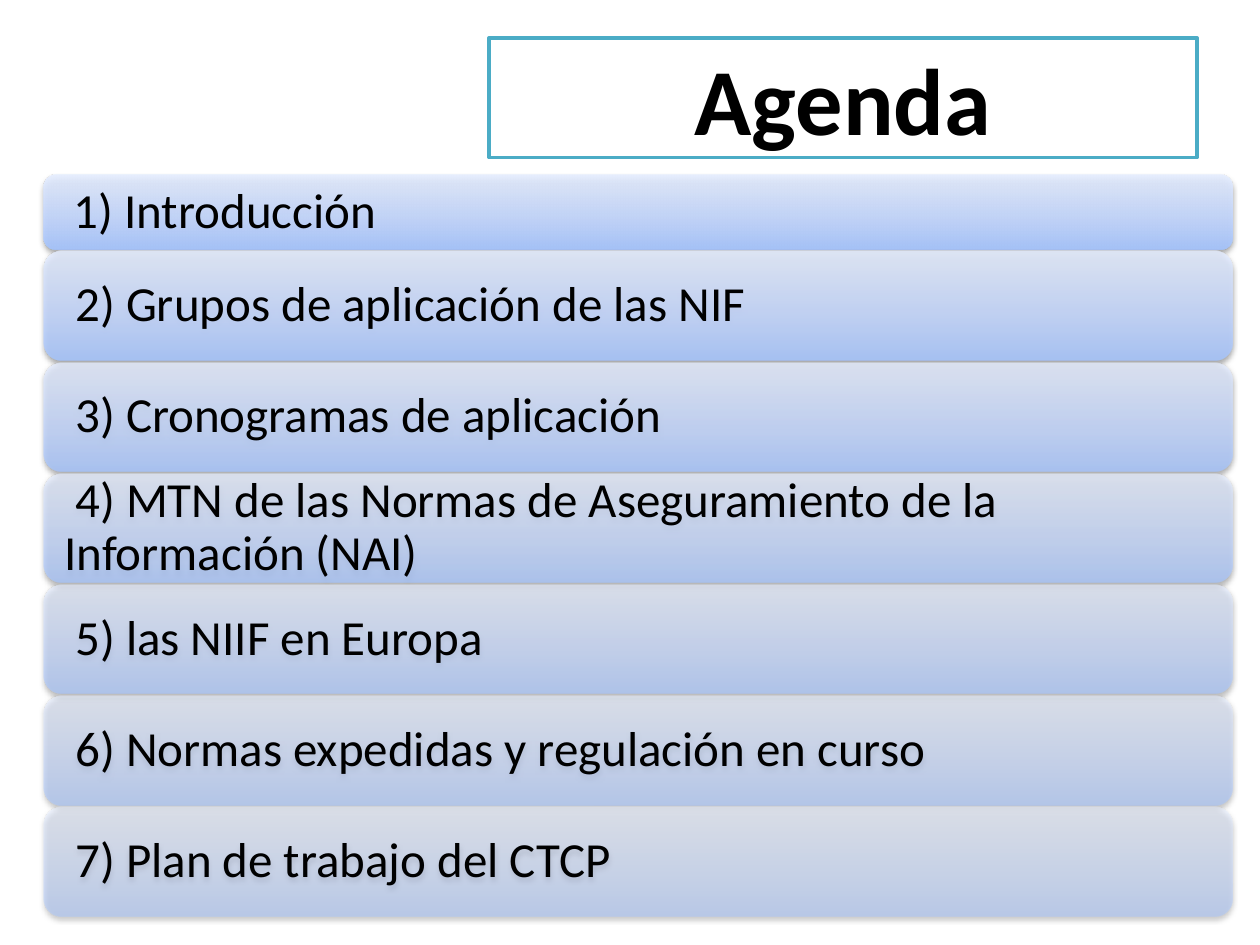
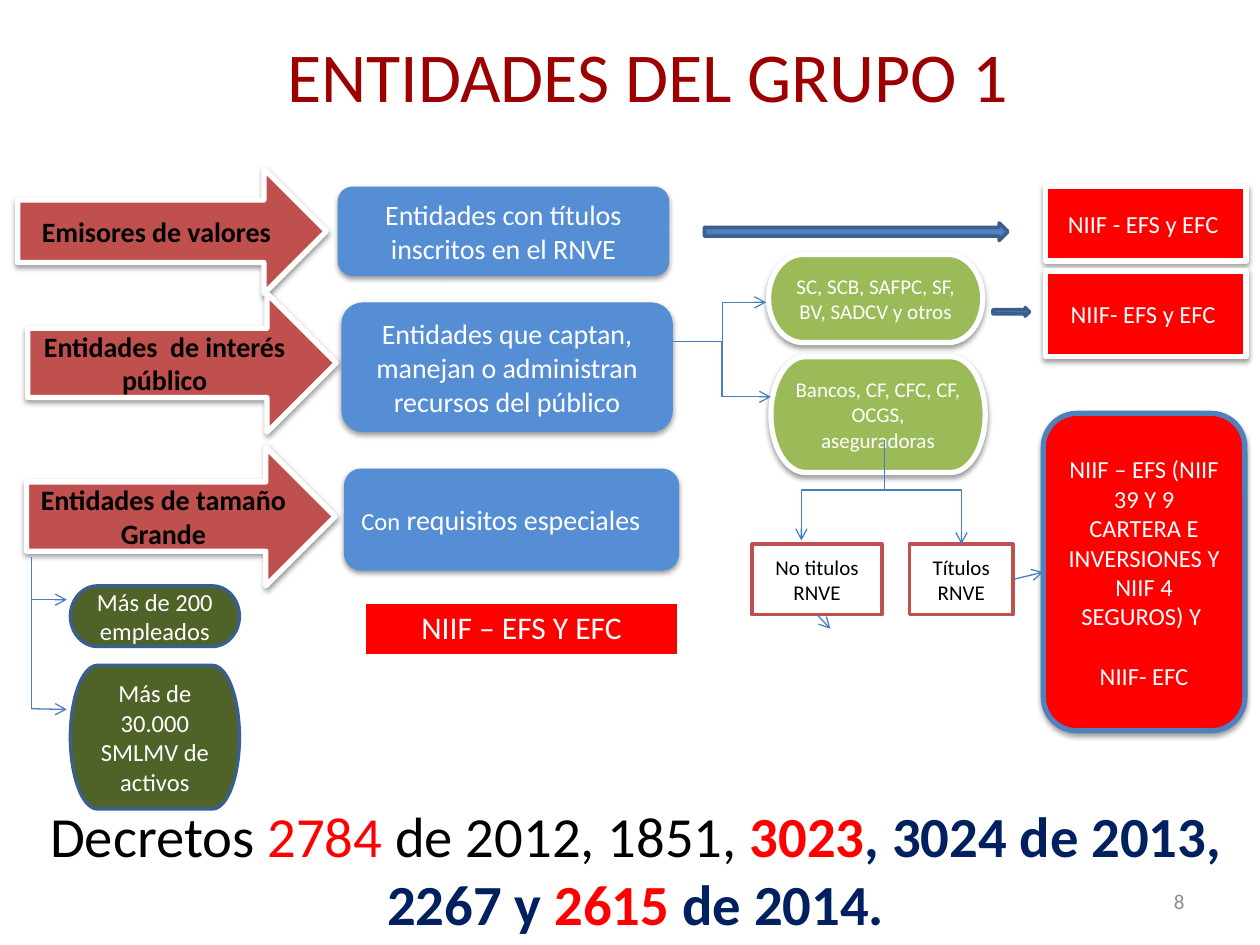
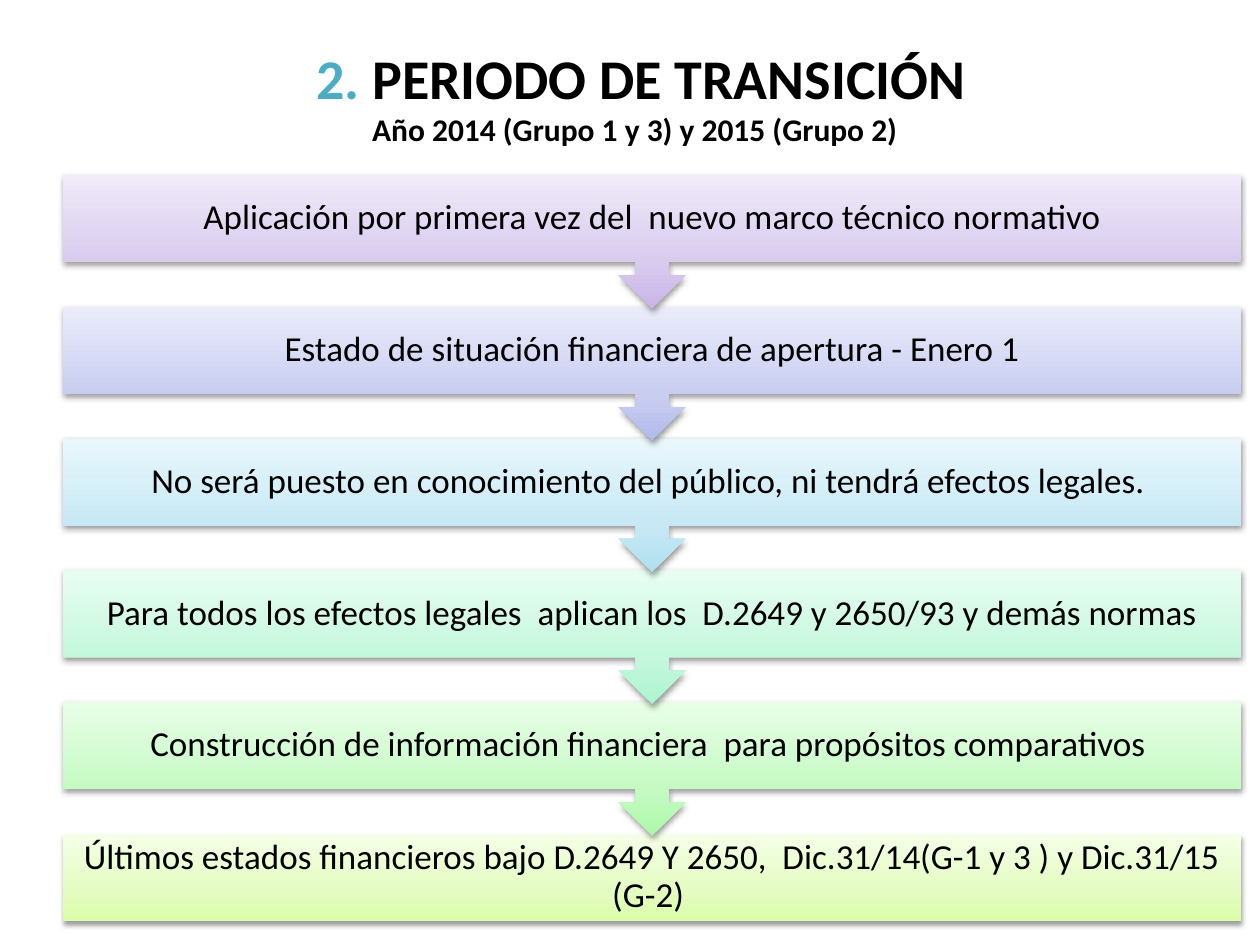
from lxml import etree
from pptx import Presentation
from pptx import util as u
from pptx.dml.color import RGBColor
from pptx.enum import shapes, text
from pptx.oxml.ns import qn

Pt = u.Pt
KIND, LINK = shapes.MSO_SHAPE, shapes.MSO_CONNECTOR
LEFT, MID, RIGHT = text.PP_ALIGN.LEFT, text.PP_ALIGN.CENTER, text.PP_ALIGN.RIGHT
FONT = "Calibri"

# Colours
BLACK = RGBColor(0x00, 0x00, 0x00)
WHITE = RGBColor(0xFF, 0xFF, 0xFF)
RED = RGBColor(0xFF, 0x00, 0x00)
NAVY = RGBColor(0x00, 0x20, 0x60)
WINE = RGBColor(0x9C, 0x00, 0x01)
TEAL = RGBColor(0x4B, 0xAC, 0xC6)
BRICK = RGBColor(0xC0, 0x50, 0x4D)
SKY = RGBColor(0x55, 0x8E, 0xD5)
BLUE = RGBColor(0x4F, 0x81, 0xBD)
STEEL = RGBColor(0x3A, 0x5F, 0x8C)
WIRE = RGBColor(0x4B, 0x7E, 0xBC)
LIME = RGBColor(0x9B, 0xBB, 0x59)
OLIVE = RGBColor(0x4F, 0x62, 0x28)
GREY = RGBColor(0x8C, 0x8C, 0x8C)

# Slide 1: agenda
AGENDA = [
    " 1) Introducción",
    " 2) Grupos de aplicación de las NIF",
    " 3) Cronogramas de aplicación",
    " 4) MTN de las Normas de Aseguramiento de la Información (NAI)",
    " 5) las NIIF en Europa",
    " 6) Normas expedidas y regulación en curso",
    " 7) Plan de trabajo del CTCP",
]
ICE = ("A4C4FF", "BFD4FF", "E6EEFF")

# Slide 2: box looks, then boxes as (name, look, place, paragraphs)
LOOKS = {
    "arrow": dict(kind=KIND.RIGHT_ARROW, fill=BRICK, line=WHITE, width=3, shade=True,
                  size=16, color=BLACK, bold=True),
    "blue": dict(kind=KIND.ROUNDED_RECTANGLE, fill=SKY, shade=True, size=16),
    "olive": dict(kind=KIND.FLOWCHART_TERMINATOR, fill=OLIVE, line=STEEL, width=2, size=14),
    "lime": dict(kind=KIND.FLOWCHART_TERMINATOR, fill=LIME, line=WHITE, width=3, shade=True,
                 size=12),
    "red": dict(kind=KIND.RECTANGLE, fill=RED, line=WHITE, width=3, shade=True, size=14),
    "round": dict(kind=KIND.ROUNDED_RECTANGLE, fill=RED, line=BLUE, width=3, shade=True,
                  size=14, gap=17),
    "white": dict(kind=KIND.RECTANGLE, fill=WHITE, line=BRICK, width=2, size=12, color=BLACK),
    "thin": dict(kind=KIND.RIGHT_ARROW, fill=BLUE, line=STEEL, width=2),
}
BOXES = [
    ("issuer", "arrow", (10.1, 96.5, 176.4, 71.3), ["Emisores de valores"]),
    ("listed", "blue", (193, 106.6, 189.4, 51.1),
     ["Entidades con títulos inscritos en el RNVE"]),
    ("public", "arrow", (15.8, 167.8, 176.4, 79.2), ["Entidades  de interés público"]),
    ("large", "arrow", (15.1, 255.6, 176.4, 79.2), ["Entidades de tamaño Grande"]),
    ("funds", "blue", (195.1, 172.8, 189.4, 74.2),
     ["Entidades que captan, manejan o administran recursos del público"]),
    ("staff", "olive", (40.3, 334.8, 96.5, 34.6), ["Más de 200 empleados"]),
    ("assets", "olive", (40.3, 380.2, 96.5, 82.1), ["Más de 30.000 SMLMV de activos"]),
    ("banks", "lime", (440.6, 203.8, 122.4, 66.2),
     ["Bancos, CF, CFC, CF, OCGS, aseguradoras"]),
    ("firms", "lime", (439.2, 145.4, 122.4, 50.4), ["SC, SCB, SAFPC, SF, BV, SADCV y otros"]),
    ("long", "thin", (402.5, 127.4, 173.5, 10.1), []),
    ("rule1", "red", (597.6, 106.6, 114.5, 42.5), ["NIIF - EFS y EFC "]),
    ("none", "white", (429.8, 311, 74.2, 40.3), ["No titulos", "RNVE"]),
    ("some", "white", (519.8, 311, 59, 40.3), ["Títulos RNVE"]),
    ("rule3", "round", (596.2, 236.2, 115.2, 181.4),
     ["NIIF – EFS (NIIF 39 Y 9 CARTERA E INVERSIONES Y NIIF 4 SEGUROS) Y ", "NIIF- EFC"]),
    ("short", "thin", (567.4, 175.7, 20.9, 5), []),
    ("rule2", "red", (597.6, 154.8, 114.5, 49), ["NIIF- EFS y EFC "]),
]
# Straight lines: start, end, arrowhead, (box, side) at start and at end
LINES = [
    ((18, 318.2), (18, 405.4), False, None, None),
    ((18, 342.7), (38.2, 342.7), True, None, None),
    ((18, 405), (38.2, 405.4), True, None, None),
    ((466.9, 351.3), (474.5, 359.3), True, ("none", 2), None),
    ((578.8, 331.2), (596.2, 326.9), True, ("some", 3), ("rule3", 1)),
]
# Elbows: start and end before turning, preset, rotation in degrees
ELBOWS = [
    ((384.5, 195.1), (440.6, 226.8), "bentConnector3", 0),
    ((388.1, 195.1), (437.8, 172.8), "bentConnector3", 0),
    ((504.7, 280.1), (549.4, 311), "bentConnector2", 0),
    ((452.9, 256.3), (510.5, 303.8), "bentConnector3", 90),
]
DECREES = [
    "Decretos ", ("2784 ", {"color": RED}), "de 2012, 1851, ",
    ("3023", {"color": RED, "bold": True}),
    (", 3024 de 2013, 2267 y ", {"color": NAVY, "bold": True}),
    ("2615", {"color": RED, "bold": True}),
    (" de 2014.", {"color": NAVY, "bold": True}),
]

# Slide 3: steps with their gradient, dark to light
STEPS = [
    ("Aplicación por primera vez del  nuevo marco técnico normativo",
     ("C9B5E8", "D8CBEE", "F0EAF9")),
    ("Estado de situación financiera de apertura - Enero 1",
     ("B2BAEC", "C9CEF1", "EAECFA")),
    ("No será puesto en conocimiento del público, ni tendrá efectos legales. ",
     ("AFE0F1", "C7E8F4", "E9F7FC")),
    ("Para todos los efectos legales  aplican los  D.2649 y 2650/93 y demás normas",
     ("ACF5D0", "C5F7DD", "E8FDF2")),
    ("Construcción de información financiera  para propósitos comparativos ",
     ("ACF9AA", "C5FAC3", "E8FEE7")),
    ("Últimos estados financieros bajo D.2649 Y 2650,  Dic.31/14(G-1 y 3 ) y Dic.31/15 (G-2) ",
     ("DAFDA7", "E4FCC2", "F5FFE7")),
]


def pts(place):
    return [Pt(v) for v in place]


def node(up, tag, **attrs):
    return etree.SubElement(up, qn(tag), {k: str(v) for k, v in attrs.items()})


def write(frame, paras, size=18, color=WHITE, bold=False, align=MID, inset=None,
          space=None, gap=0, top=False):
    """Fill a frame; a paragraph is a string or a list of runs."""
    frame.word_wrap = True
    frame.vertical_anchor = text.MSO_ANCHOR.TOP if top else text.MSO_ANCHOR.MIDDLE
    if inset is not None:
        for side in ("left", "right", "top", "bottom"):
            setattr(frame, "margin_" + side, Pt(inset))
    for i, runs in enumerate(paras):
        para = frame.paragraphs[0] if i == 0 else frame.add_paragraph()
        para.alignment = align
        if space:
            para.line_spacing = space
        if gap and i:
            para.space_before = Pt(gap)
        for item in [runs] if isinstance(runs, str) else runs:
            words, extra = (item, {}) if isinstance(item, str) else item
            look = {"size": size, "color": color, "bold": bold, **extra}
            run = para.add_run()
            run.text = words
            for key, val in {"name": FONT, "size": Pt(look["size"]),
                             "bold": look["bold"]}.items():
                setattr(run.font, key, val)
            run.font.color.rgb = look["color"]


def label(slide, place, paras, **look):
    box = slide.shapes.add_textbox(*pts(place))
    write(box.text_frame, paras, **look)
    return box


def blend(shape, tones, alpha):
    """Upward three-stop gradient."""
    shape.fill.gradient()
    shape.fill.gradient_angle = 90
    stops = shape._element.spPr.find(".//" + qn("a:gsLst"))
    for old in list(stops):
        stops.remove(old)
    for pos, tone in zip((0, 35, 100), tones):
        tint = node(node(stops, "a:gs", pos=pos * 1000), "a:srgbClr", val=tone)
        if alpha < 100:
            node(tint, "a:alpha", val=round(alpha * 1000))


def block(slide, place, paras, kind, fill, line=None, width=1, shade=False, alpha=100, **look):
    shape = slide.shapes.add_shape(kind, *pts(place))
    if isinstance(fill, RGBColor):
        shape.fill.solid()
        shape.fill.fore_color.rgb = fill
    else:
        blend(shape, fill, alpha)
    if line is None:
        shape.line.fill.background()
    else:
        shape.line.color.rgb = line
        shape.line.width = Pt(width)
    shape.shadow.inherit = False
    if shade:
        cast = node(shape._element.spPr.find(qn("a:effectLst")), "a:outerShdw",
                    blurRad=Pt(3.1), dist=Pt(1.6), dir=5400000, rotWithShape=0)
        node(node(cast, "a:srgbClr", val="000000"), "a:alpha", val=38000)
    write(shape.text_frame, paras, **look)
    return shape


def wire(slide, kind, start, end, head=True):
    link = slide.shapes.add_connector(kind, *pts(start + end))
    link.line.color.rgb = WIRE
    link.line.width = Pt(0.75)
    props = link._element.spPr
    if head:
        node(props.find(qn("a:ln")), "a:tailEnd", type="arrow")
    node(props, "a:effectLst")
    return link


def agenda(slide):
    block(slide, (279.4, 21.6, 404.6, 68.4), ["Agenda"], KIND.RECTANGLE, WHITE,
          TEAL, 2, size=54, color=BLACK, bold=True)
    y = 100.1
    for i, item in enumerate(AGENDA):
        high = 62.6 if i else 42.5
        block(slide, (25.2, y, 679, high), [item], KIND.ROUNDED_RECTANGLE, ICE, shade=True,
              alpha=90 - 40 * i / (len(AGENDA) - 1), size=28, color=BLACK,
              align=LEFT, inset=8.6, space=0.9)
        y += high + 0.9


def group(slide):
    # Headings
    label(slide, (14.4, 462.2, 697.7, 68.4), [DECREES], size=32.4, color=BLACK)
    head = label(slide, (64.8, 15.1, 591.8, 61.9), ["ENTIDADES DEL GRUPO 1"],
                 size=40, color=WINE, top=True)
    head.text_frame.paragraphs[0]._p.get_or_add_pPr().set("marL", str(Pt(18.7)))

    # Boxes
    made = {name: block(slide, place, paras, **LOOKS[look])
            for name, look, place, paras in BOXES}
    block(slide, (196.6, 267.8, 191.5, 58.3),
          [[("Con", {"size": 14}), " requisitos especiales"]], align=LEFT, **LOOKS["blue"])

    # Connectors
    for start, end, head, near, far in LINES:
        link = wire(slide, LINK.STRAIGHT, start, end, head)
        if near:
            link.begin_connect(made[near[0]], near[1])
        if far:
            link.end_connect(made[far[0]], far[1])
    for start, end, preset, turn in ELBOWS:
        props = wire(slide, LINK.ELBOW, start, end)._element.spPr
        props.find(qn("a:prstGeom")).set("prst", preset)
        if turn:
            props.find(qn("a:xfrm")).set("rot", str(turn * 60000))

    # Table and page number
    grid = slide.shapes.add_table(1, 1, *pts((208.8, 344.9, 178.6, 29.5))).table
    grid.first_row = grid.horz_banding = False
    cell = grid.cell(0, 0)
    cell.fill.solid()
    cell.fill.fore_color.rgb = RED
    write(cell.text_frame, ["NIIF – EFS Y EFC"])
    label(slide, (516.2, 500.4, 167.8, 28.8), ["8"], size=12, color=GREY, align=RIGHT)


def period(slide):
    last = len(STEPS) - 1
    for i, (words, tones) in reversed(list(enumerate(STEPS))):
        kind, high = ((KIND.RECTANGLE, 49.7) if i == last
                      else (KIND.DOWN_ARROW_CALLOUT, 76.3))
        block(slide, (36, 100.1 + 75.3 * i, 673.2, high), [words], kind, tones, shade=True,
              size=20, color=BLACK, inset=11.5, space=0.9)
    label(slide, (36.7, 20.9, 652.3, 67.7),
          [[(" 2. ", {"color": TEAL}), "PERIODO DE TRANSICIÓN"],
           [("Año 2014 (Grupo 1 y 3) y 2015 (Grupo 2)", {"size": 18})]],
          size=32, color=BLACK, bold=True)


def main():
    deck = Presentation()
    deck.slide_width, deck.slide_height = Pt(720), Pt(540)
    for draw in (agenda, group, period):
        draw(deck.slides.add_slide(deck.slide_layouts[6]))
    deck.save("out.pptx")


if __name__ == "__main__":
    main()
